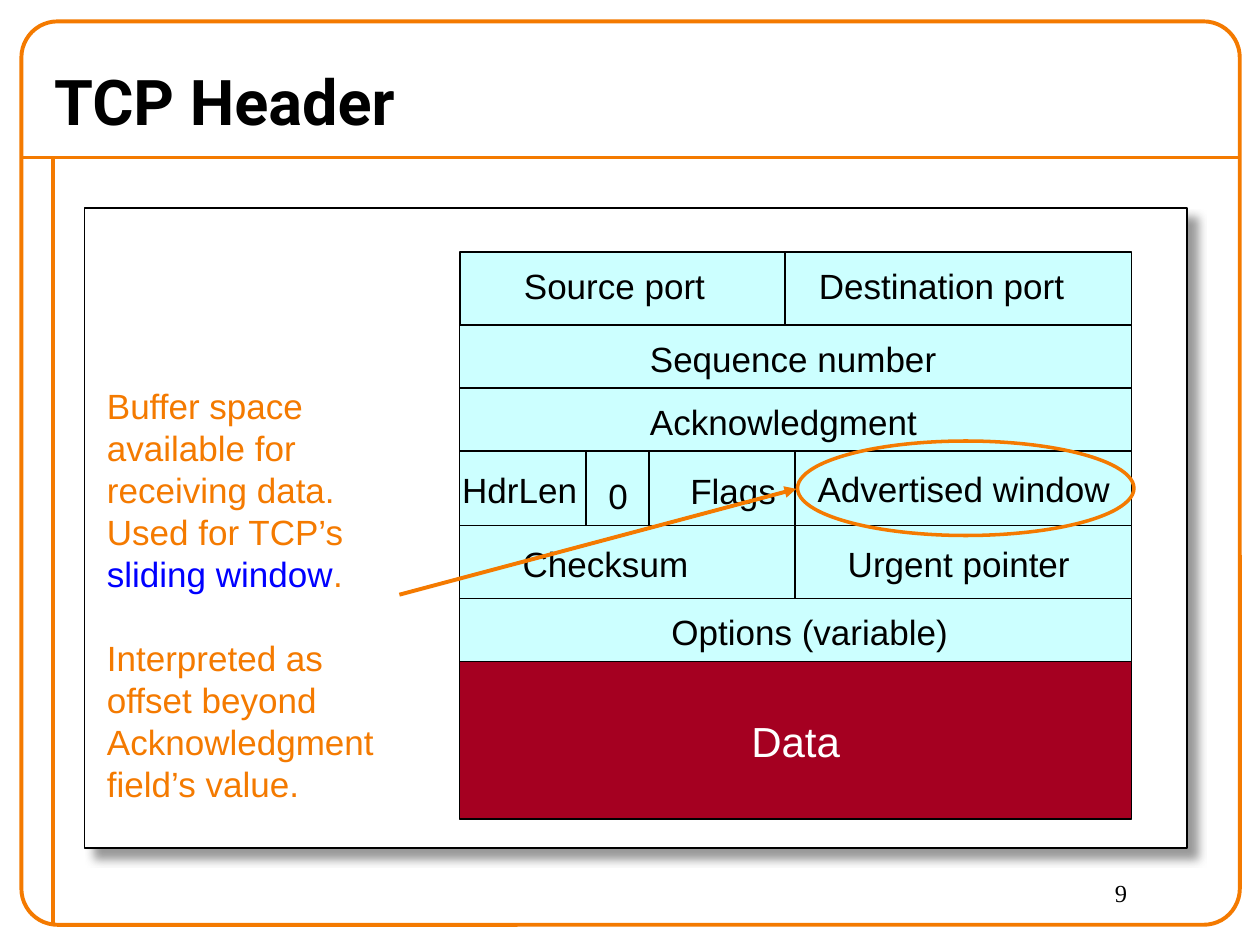
from lxml import etree
from pptx import Presentation
from pptx.dml.color import RGBColor
from pptx.enum.shapes import MSO_CONNECTOR, MSO_SHAPE
from pptx.enum.text import MSO_ANCHOR, MSO_AUTO_SIZE, PP_ALIGN
from pptx.oxml import parse_xml
from pptx.oxml.ns import nsdecls, qn
from pptx.util import Inches, Pt

COLORS = {
    "orange": "F47A00", "black": "000000", "white": "FFFFFF",
    "cyan": "CCFFFF", "red": "A50021", "blue": "0000FF", "shadow": "777777",
}
RGB = {name: RGBColor.from_string(value) for name, value in COLORS.items()}

prs = Presentation()
prs.slide_width, prs.slide_height = Inches(10), Inches(7.5)
s = prs.slides.add_slide(prs.slide_layouts[5])


def add_box(kind, box, fill=None, line=None, width=0.75):
    sp = s.shapes.add_shape(kind, *[Inches(v) for v in box])
    sp.shadow.inherit = False
    if fill:
        sp.fill.solid()
        sp.fill.fore_color.rgb = RGB[fill]
    else:
        sp.fill.background()
    if line:
        sp.line.color.rgb = RGB[line]
        sp.line.width = Pt(width)
    else:
        sp.line.fill.background()
    return sp


def add_line(start, end, color, width):
    cn = s.shapes.add_connector(
        MSO_CONNECTOR.STRAIGHT, *[Inches(v) for v in (*start, *end)])
    cn.line.color.rgb = RGB[color]
    cn.line.width = Pt(width)
    etree.SubElement(cn._element.spPr, qn("a:effectLst"))
    return cn


add_line((0.17, 1.25), (9.83, 1.25), "orange", 2.25)
add_line((0.42, 1.25), (0.42, 7.33), "orange", 2.25)
frame = add_box(MSO_SHAPE.ROUNDED_RECTANGLE, (0.17, 0.17, 9.67, 7.17),
                line="orange", width=2.25)
frame.adjustments[0] = 0.04

number = s.shapes.add_textbox(Inches(8.75), Inches(6.92), Inches(1), Inches(0.42))
number.text_frame.word_wrap = True
p = number.text_frame.paragraphs[0]
p.text = "9"
p.font.size, p.font.name = Pt(14), "Times New Roman"
p.font.color.rgb = RGB["black"]

panel = add_box(MSO_SHAPE.RECTANGLE, (0.67, 1.65, 8.75, 5.08), "white", "black")
effects = panel._element.spPr.find(qn("a:effectLst"))
effects.append(parse_xml(
    f'<a:outerShdw {nsdecls("a")} blurRad="{Pt(5)}" dist="{Pt(8.5)}" '
    f'dir="2700000" algn="tl" rotWithShape="0">'
    f'<a:srgbClr val="{COLORS["shadow"]}"><a:alpha val="75000"/></a:srgbClr>'
    '</a:outerShdw>'))

title = s.shapes.title
title.left, title.top = Inches(0.33), Inches(0.42)
title.width, title.height = Inches(8.82), Inches(0.75)
tf = title.text_frame
tf.text = "TCP Header"
tf.auto_size = MSO_AUTO_SIZE.NONE
tf.vertical_anchor = MSO_ANCHOR.MIDDLE
p = tf.paragraphs[0]
p.alignment = PP_ALIGN.LEFT
p.font.size, p.font.name, p.font.bold = Pt(36), "Roboto", True
p.font.color.rgb = RGB["black"]

LEFT, RIGHT, MIDDLE = 3.65, 8.98, 6.31
tops = [2, 2.58, 3.08, 3.58, 4.17, 4.75, 5.25, 6.5]
splits = [6.23, None, None, MIDDLE, MIDDLE, None, None]
for top, bottom, split in zip(tops, tops[1:], splits):
    edges = [LEFT, split, RIGHT] if split else [LEFT, RIGHT]
    fill = "red" if bottom == tops[-1] else "cyan"
    for x1, x2 in zip(edges, edges[1:]):
        cell = add_box(MSO_SHAPE.RECTANGLE, (x1, top, x2 - x1, bottom - top),
                       fill, "black")

tf = cell.text_frame
tf.word_wrap = False
tf.vertical_anchor = MSO_ANCHOR.MIDDLE
p = tf.paragraphs[0]
p.text = "Data"
p.alignment = PP_ALIGN.CENTER
p.font.size, p.font.name = Pt(24), "Arial"
p.font.color.rgb = RGB["white"]

for x in (4.65, 5.15):
    add_line((x, tops[3]), (x, tops[4]), "black", 0.75)

labels = [
    ("Source port", 4.06, 2.05, 1.64),
    ("Destination port", 6.4, 2.05, 2.15),
    ("Sequence number", 5.06, 2.63, 2.47),
    ("Acknowledgment", 5.06, 3.13, 2.32),
    ("Advertised window", 6.39, 3.66, 2.52),
    ("HdrLen", 3.57, 3.67, 1.17),
    ("Flags", 5.38, 3.68, 0.88),
    ("0", 4.73, 3.72, 0.36),
    ("Checksum", 4.05, 4.26, 1.51),
    ("Urgent pointer", 6.63, 4.26, 1.96),
    ("Options (variable)", 5.23, 4.8, 2.39),
]
for text, x, y, w in labels:
    fill = "cyan" if x > LEFT else None
    label = add_box(MSO_SHAPE.RECTANGLE, (x, y, w, 0.43), fill)
    tf = label.text_frame
    tf.word_wrap = False
    tf.vertical_anchor = MSO_ANCHOR.TOP
    p = tf.paragraphs[0]
    p.text = text
    p.alignment = PP_ALIGN.LEFT
    p.line_spacing = Pt(24)
    p.font.size, p.font.name = Pt(20), "Arial"
    p.font.color.rgb = RGB["black"]

note = s.shapes.add_textbox(Inches(0.75), Inches(3), Inches(2.42), Inches(3.43))
tf = note.text_frame
tf.word_wrap = True
paragraphs = [
    [("Buffer space available for receiving data. Used for TCP’s ", "orange"),
     ("sliding window", "blue"), (".", "orange")],
    [("Interpreted as offset beyond Acknowledgment field’s value.", "orange")],
]
for i, runs in enumerate(paragraphs):
    p = tf.add_paragraph() if i else tf.paragraphs[0]
    p.line_spacing = Pt(24)
    p.space_before = Pt(24 * i)
    p.font.size, p.font.name = Pt(20), "Arial"
    for text, color in runs:
        r = p.add_run()
        r.text = text
        r.font.color.rgb = RGB[color]

add_box(MSO_SHAPE.OVAL, (6.33, 3.5, 2.67, 0.75), line="orange", width=2)
arrow = add_line((3.17, 4.72), (6.32, 3.88), "orange", 2.25)
etree.SubElement(arrow.line._get_or_add_ln(), qn("a:tailEnd"), type="triangle")

prs.save("out.pptx")
